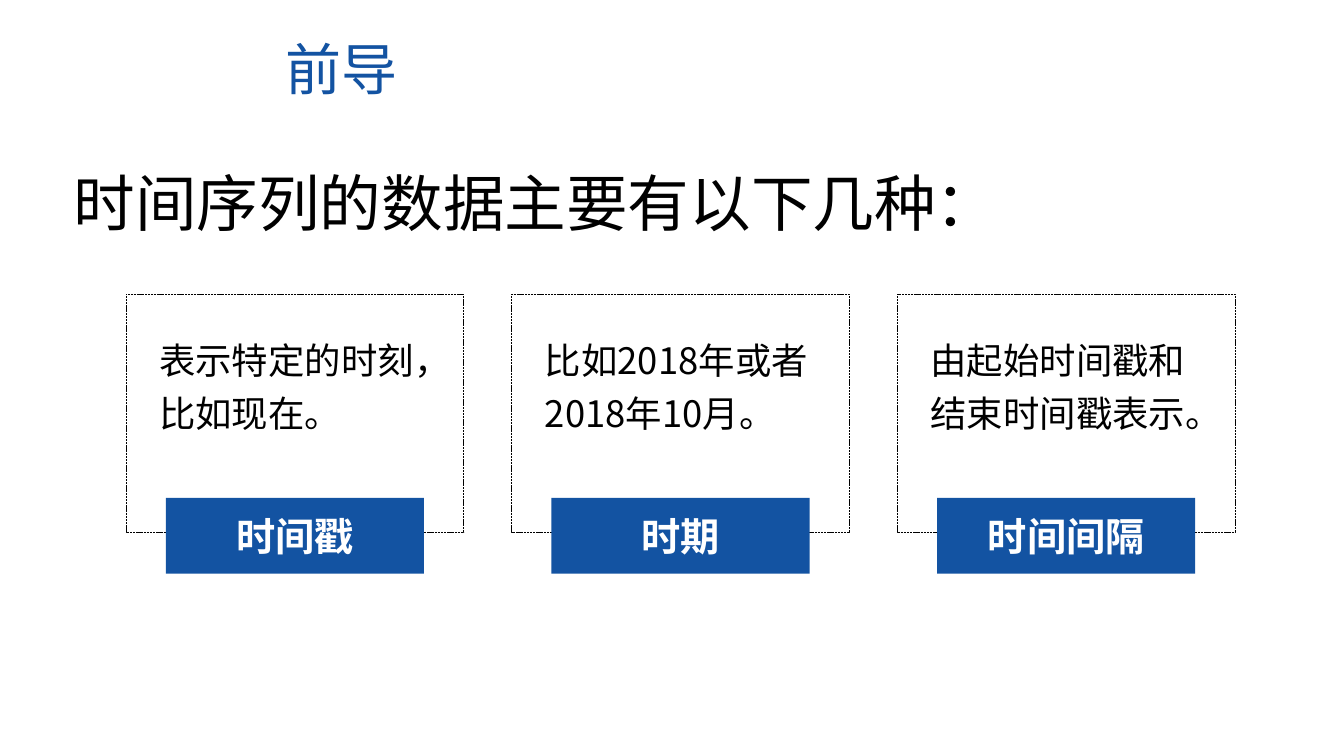
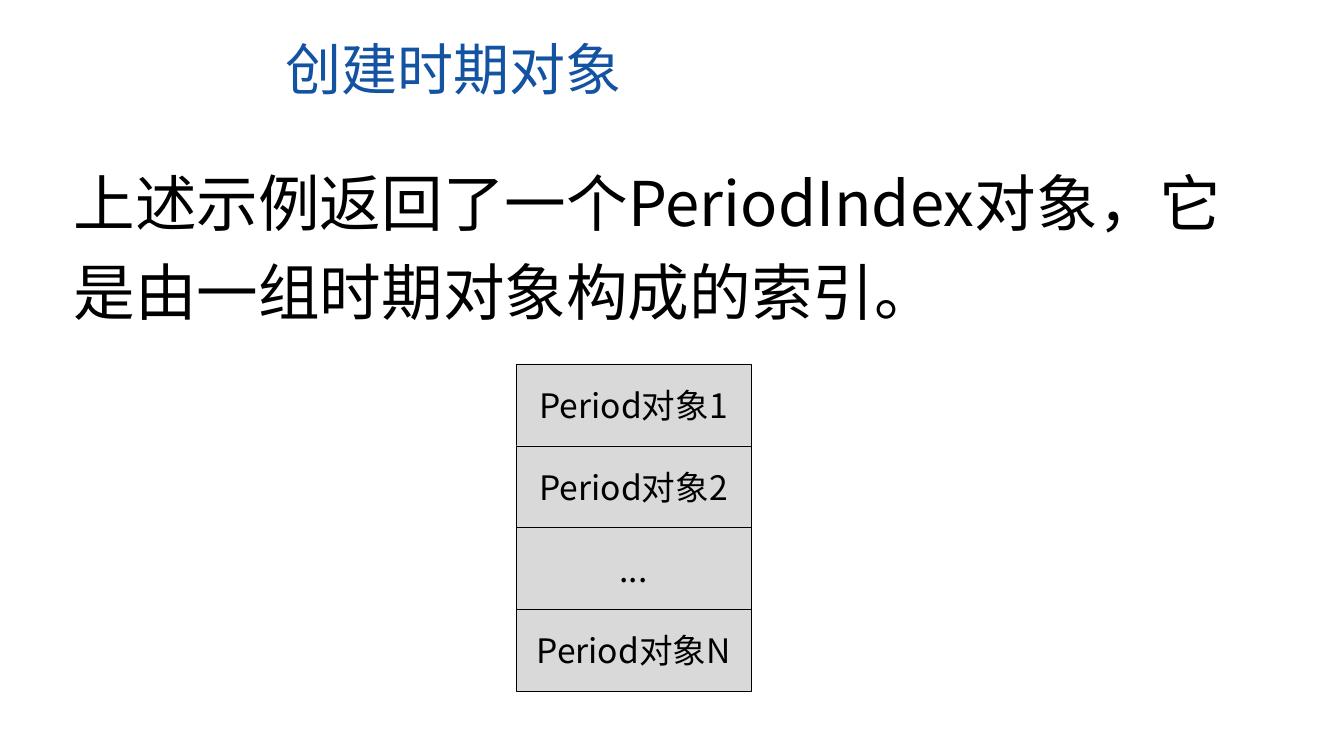
from lxml import etree
from pptx import Presentation
from pptx.dml.color import RGBColor
from pptx.enum import dml, shapes, text
from pptx.oxml.ns import qn
from pptx.util import Inches, Pt

# Shared style
FONT = "Noto Sans CJK SC"
BLUE = RGBColor(0x13, 0x53, 0xA2)
GREY = RGBColor(0xD9, 0xD9, 0xD9)
BLACK = RGBColor(0, 0, 0)
WHITE = RGBColor(255, 255, 255)
LEFT, CENTER = text.PP_ALIGN.LEFT, text.PP_ALIGN.CENTER
TOP, MIDDLE = text.MSO_ANCHOR.TOP, text.MSO_ANCHOR.MIDDLE
TITLE_ONLY = 5

KINDS = [
    ("时间戳", "表示特定的时刻，比如现在。"),
    ("时期", "比如2018年或者2018年10月。"),
    ("时间间隔", "由起始时间戳和结束时间戳表示。"),
]
PERIODS = ["Period对象1", "Period对象2", "...", "Period对象N"]


def write(shape, wording, size, color=BLACK, bold=False,
          align=LEFT, anchor=TOP, spacing=None):
    frame = shape.text_frame
    frame.word_wrap = True
    frame.auto_size = text.MSO_AUTO_SIZE.NONE
    frame.vertical_anchor = anchor
    frame.text = wording
    paragraph = frame.paragraphs[0]
    paragraph.alignment = align
    if spacing:
        paragraph.line_spacing = spacing
    font = paragraph.font
    font.name, font.size, font.bold = FONT, Pt(size), bold
    font.color.rgb = color
    # Chinese characters take the East Asian typeface
    defaults = paragraph._p.pPr.find(qn("a:defRPr"))
    etree.SubElement(defaults, qn("a:ea"), typeface=FONT)


def add_text(parent, left, top, width, height, wording, size):
    box = parent.add_textbox(Inches(left), Inches(top),
                             Inches(width), Inches(height))
    write(box, wording, size, spacing=1.2)


def add_rect(parent, left, top, width, height, fill=None, line_width=None):
    rect = parent.add_shape(shapes.MSO_SHAPE.RECTANGLE, Inches(left),
                            Inches(top), Inches(width), Inches(height))
    rect.shadow.inherit = False
    if fill is None:
        rect.fill.background()
    else:
        rect.fill.solid()
        rect.fill.fore_color.rgb = fill
    if line_width is None:
        rect.line.fill.background()
    else:
        rect.line.color.rgb = BLACK
        rect.line.width = Pt(line_width)
    return rect


def add_titled_slide(prs, heading, lead, lead_height):
    slide = prs.slides.add_slide(prs.slide_layouts[TITLE_ONLY])
    title = slide.shapes.title
    title.left, title.top = Inches(2.73), Inches(0.29)
    title.width, title.height = Inches(9.44), Inches(0.77)
    write(title, heading, 40, BLUE)
    add_text(slide.shapes, 0.63, 1.44, 12.03, lead_height, lead, 44)
    return slide


def add_kind_card(slide, left, top, width, height, name, meaning):
    """Dashed frame with a description and a label across its lower edge."""
    card = slide.shapes.add_group_shape().shapes
    frame = add_rect(card, left, top, width, height, line_width=0.5)
    frame.line.dash_style = dml.MSO_LINE.SQUARE_DOT
    label_width, label_height = 2.56, 0.75
    label = add_rect(card, left + (width - label_width) / 2,
                     top + height - 0.34, label_width, label_height, BLUE)
    write(label, name, 28, WHITE, True, CENTER, MIDDLE)
    add_text(card, left + 0.23, top + 0.3, width - 0.46, 1.08, meaning, 26)


def add_kind_row(slide, left, top, width, height):
    card_width = 3.35
    pitch = (width - card_width) / (len(KINDS) - 1)
    for i, (name, meaning) in enumerate(KINDS):
        add_kind_card(slide, left + i * pitch, top, card_width, height,
                      name, meaning)


def add_period_stack(slide, left, top, width, height):
    row_height = height / len(PERIODS)
    for i, name in enumerate(PERIODS):
        row = add_rect(slide.shapes, left, top + i * row_height,
                       width, row_height, GREY, 0.25)
        write(row, name, 24, align=CENTER, anchor=MIDDLE)


def main():
    prs = Presentation()
    prs.slide_width, prs.slide_height = Inches(13.33), Inches(7.5)

    # Kinds of time series data
    intro = add_titled_slide(prs, "前导", "时间序列的数据主要有以下几种：", 0.91)
    add_kind_row(intro, 1.25, 2.92, 11, 2.36)

    # An index made of period objects
    periods = add_titled_slide(
        prs, "创建时期对象",
        "上述示例返回了一个PeriodIndex对象，它是由一组时期对象构成的索引。", 1.79)
    add_period_stack(periods, 5.12, 3.61, 2.33, 3.25)

    prs.save("out.pptx")


if __name__ == "__main__":
    main()
